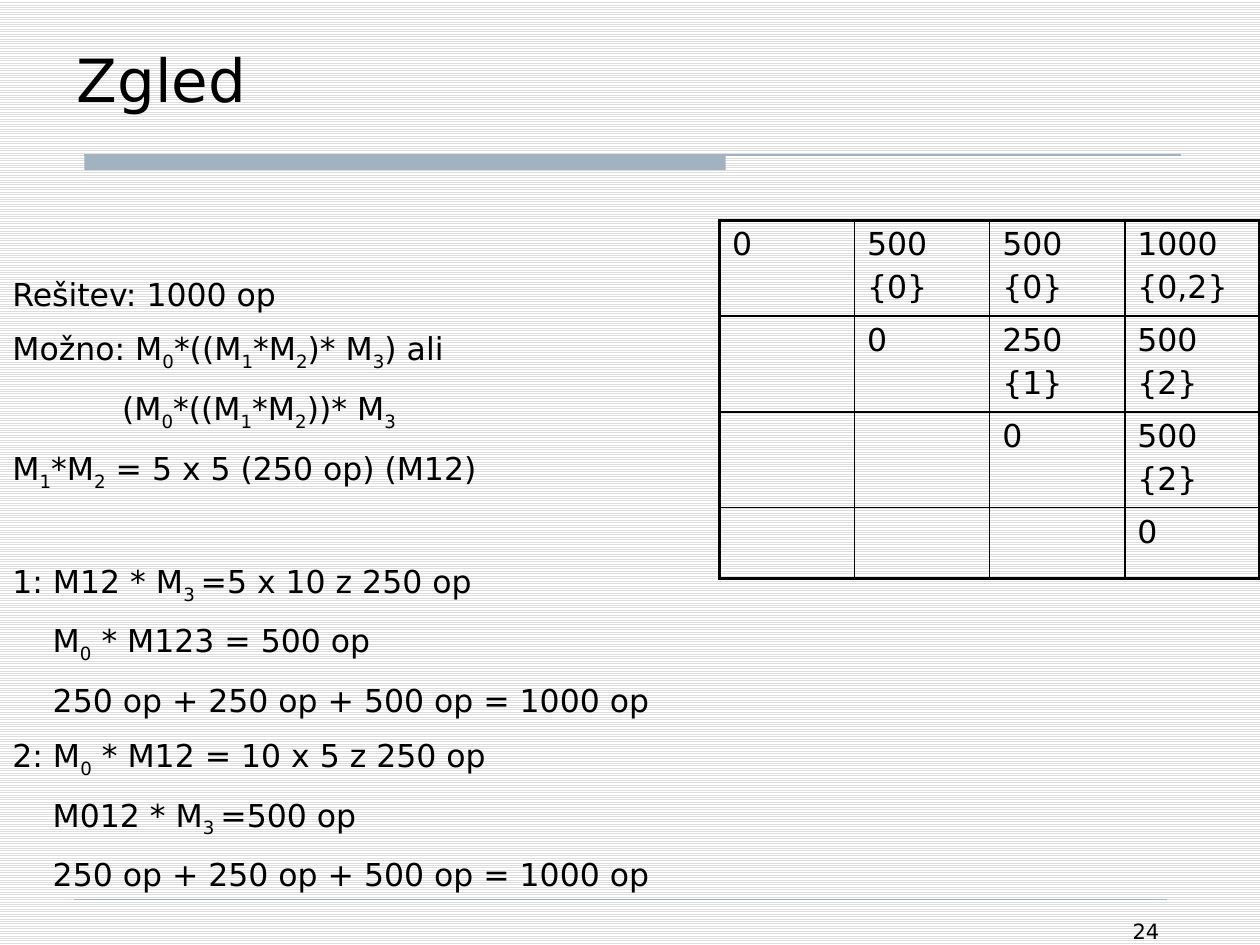
from lxml.etree import SubElement
from pptx import Presentation
from pptx.dml.color import RGBColor
from pptx.enum.dml import MSO_PATTERN
from pptx.enum.shapes import MSO_CONNECTOR, MSO_SHAPE
from pptx.enum.text import MSO_ANCHOR, PP_ALIGN
from pptx.oxml.ns import qn
from pptx.util import Inches, Pt

COLS, ROWS = 100, 75
WIDTH, HEIGHT = Inches(10), Inches(7.5)
FONT = "DejaVu Sans"
BLACK, ACCENT = "000000", "A3B2C1"

SOLUTION = [
    ("Rešitev: 1000 op", 0, 0),
    ("Možno: M|0|*((M|1|*M|2|)* M|3|) ali", 0, 9.6),
    ("(M|0|*((M|1|*M|2|))* M|3", 8.7, 9.6),
    ("M|1|*M|2| = 5 x 5 (250 op) (M12)", 0, 9.6),
    ("1: M12 * M|3 |=5 x 10 z 250 op", 0, 40),
    ("M|0| * M123 = 500 op", 3.2, 9.6),
    ("250 op + 250 op + 500 op = 1000 op", 3.2, 9.6),
    ("2: M|0| * M12 = 10 x 5 z 250 op", 0, 9.6),
    ("M012 * M|3 |=500 op", 3.2, 9.6),
    ("250 op + 250 op + 500 op = 1000 op", 3.2, 9.6),
]
COSTS = [
    ["0", "500\n{0}", "500\n{0}", "1000\n{0,2}"],
    ["", "0", "250\n{1}", "500\n{2}"],
    ["", "", "0", "500\n{2}"],
    ["", "", "", "0"],
]
COST_ROWS = [7.6, 7.6, 7.6, 5.6]


def color(value):
    return RGBColor.from_string(value)


def col(n):
    return round(WIDTH * n / COLS)


def row(n):
    return round(HEIGHT * n / ROWS)


def place(box):
    x, y, w, h = box
    return col(x), row(y), col(w), row(h)


def style(font, size):
    font.name, font.size = FONT, Pt(size)
    font.color.rgb = color(BLACK)


def add_text(s, box, text, size, align=PP_ALIGN.LEFT, anchor=MSO_ANCHOR.TOP):
    tf = s.shapes.add_textbox(*place(box)).text_frame
    tf.word_wrap = True
    tf.vertical_anchor = anchor
    p = tf.paragraphs[0]
    p.text, p.alignment = text, align
    style(p.runs[0].font, size)


def add_rule(s, x, y, w, weight):
    line = s.shapes.add_connector(
        MSO_CONNECTOR.STRAIGHT, col(x), row(y), col(x + w), row(y))
    line.line.color.rgb = color(ACCENT)
    line.line.width = Pt(weight)
    SubElement(line._element.spPr, qn("a:effectLst"))


def add_header_rule(s, box):
    x, y, w, h = box
    sp = s.shapes.add_shape(MSO_SHAPE.RECTANGLE, *place((x, y, w * 0.585, h)))
    sp.shadow.inherit = False
    sp.fill.solid()
    sp.fill.fore_color.rgb = color(ACCENT)
    sp.line.fill.background()
    add_rule(s, x, y, w, 0.75)


def add_solution(s, box):
    tf = s.shapes.add_textbox(*place(box)).text_frame
    tf.word_wrap = True
    for i, (text, indent, before) in enumerate(SOLUTION):
        p = tf.paragraphs[0] if i == 0 else tf.add_paragraph()
        p.space_before = Pt(before)
        p._p.get_or_add_pPr().set("marL", str(col(indent)))
        for j, part in enumerate(text.split("|")):
            r = p.add_run()
            r.text = part
            style(r.font, 18)
            if j % 2:
                r.font._element.set("baseline", "-25000")


def set_borders(cell, weights):
    tcPr = cell._tc.get_or_add_tcPr()
    for i, (side, weight) in enumerate(zip("LRTB", weights)):
        ln = tcPr.makeelement(qn(f"a:ln{side}"), {"w": str(Pt(weight))})
        fill = SubElement(ln, qn("a:solidFill"))
        SubElement(fill, qn("a:srgbClr"), val=BLACK)
        tcPr.insert(i, ln)


def add_costs(s, box):
    last = len(COSTS) - 1
    table = s.shapes.add_table(len(COSTS), len(COSTS), *place(box)).table
    table.first_row = table.horz_banding = False
    for i, values in enumerate(COSTS):
        table.rows[i].height = row(COST_ROWS[i])
        table.columns[i].width = col(box[2] / len(COSTS))
        for j, value in enumerate(values):
            cell = table.cell(i, j)
            cell.fill.background()
            edges = (j == 0, j == last, i == 0, i == last)
            set_borders(cell, [2.25 if edge else 1 for edge in edges])
            cell.text_frame.text = value
            for k, p in enumerate(cell.text_frame.paragraphs):
                p.space_before = Pt(3.6 if k else 0)
                style(p.font, 18)
                for r in p.runs:
                    style(r.font, 18)


def build_slide(prs):
    s = prs.slides.add_slide(prs.slide_layouts[6])
    fill = s.background.fill
    fill.patterned()
    fill.pattern = MSO_PATTERN.LIGHT_HORIZONTAL
    fill.fore_color.rgb = color("DDDDDD")
    fill.back_color.rgb = color("FFFFFF")
    add_header_rule(s, (6.7, 12.3, 87, 1.2))
    add_rule(s, 5.9, 71.4, 86.7, 0.25)
    add_text(s, (5.1, 2.1, 87.5, 7.5), "Zgled", 34, anchor=MSO_ANCHOR.BOTTOM)
    add_costs(s, (57.1, 17.5, 42.9, sum(COST_ROWS)))
    add_text(s, (71.3, 72.4, 21.7, 5.2), "24", 12, align=PP_ALIGN.RIGHT)
    add_solution(s, (0, 21.3, 69.2, 53.7))


def main():
    prs = Presentation()
    prs.slide_width, prs.slide_height = WIDTH, HEIGHT
    build_slide(prs)
    prs.save("out.pptx")


if __name__ == "__main__":
    main()
